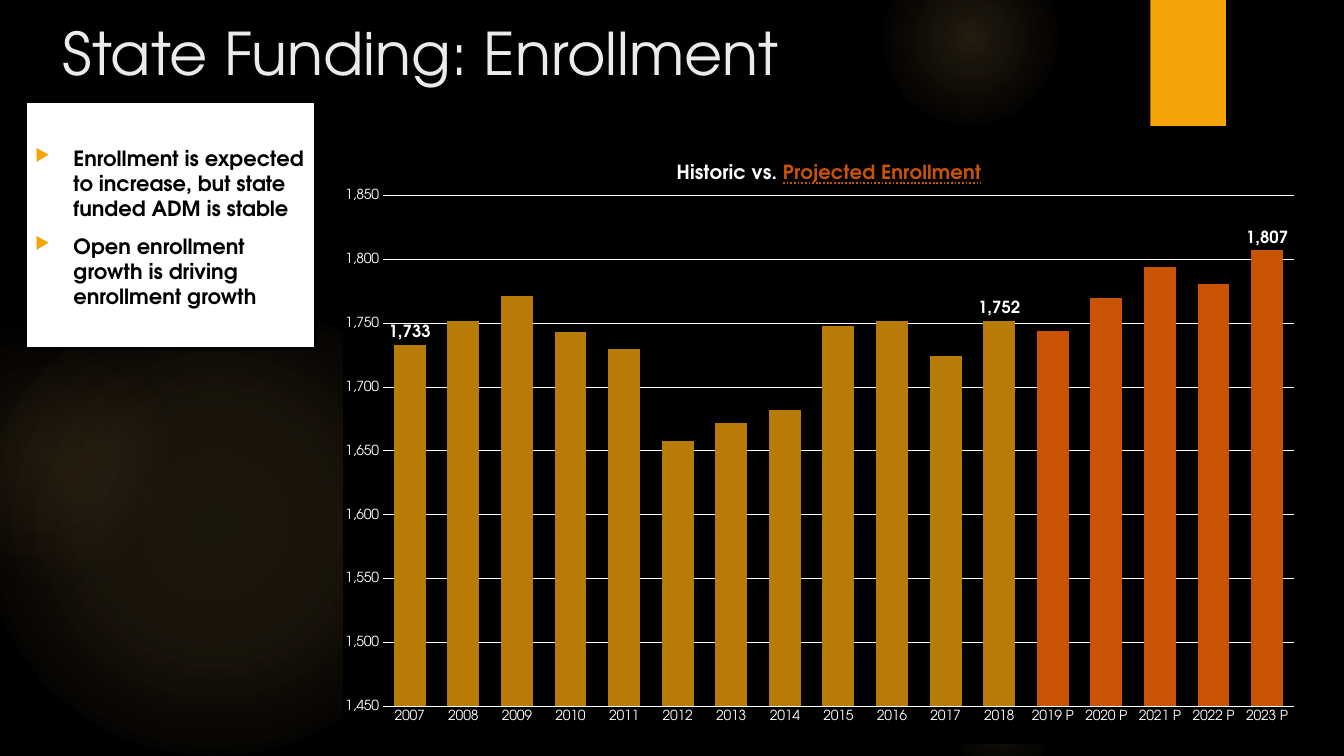
from lxml import etree
from pptx import Presentation
from pptx.chart.data import CategoryChartData
from pptx.dml.color import RGBColor
from pptx.enum.chart import XL_CHART_TYPE, XL_LABEL_POSITION, XL_TICK_MARK
from pptx.enum.shapes import MSO_SHAPE
from pptx.enum.text import MSO_ANCHOR, MSO_UNDERLINE, PP_ALIGN
from pptx.oxml import parse_xml
from pptx.oxml.ns import nsdecls, qn
from pptx.util import Emu, Pt

COLUMNS = XL_CHART_TYPE.COLUMN_CLUSTERED
ABOVE = XL_LABEL_POSITION.OUTSIDE_END
NO_TICK = XL_TICK_MARK.NONE
RECTANGLE, ELLIPSE = MSO_SHAPE.RECTANGLE, MSO_SHAPE.OVAL
TOP, LEFT = MSO_ANCHOR.TOP, PP_ALIGN.LEFT
DOTTED = MSO_UNDERLINE.DOTTED_LINE

BLACK, WHITE, PALE = "000000", "FFFFFF", "EBEBEB"
AMBER, GLOW, PEACH = "F5A408", "FAC96A", "F59B74"
HISTORIC, PROJECTED = "B87B06", "CB5304"

GLOWS = [
    (-17, 292, 458, [(0, GLOW, 11), (36, GLOW, 10), (75, GLOW, 0)]),
    (-92, 317, 258, [(0, GLOW, 8), (36, GLOW, 5), (71, PEACH, 0)]),
    (875, -50, 175, [(0, GLOW, 14), (36, GLOW, 7), (73, GLOW, 0)]),
    (941, 667, 108, [(0, GLOW, 10), (31, GLOW, 5), (66, GLOW, 0)]),
]
POINTS = [
    "Enrollment is expected to increase, but state funded ADM is stable",
    "Open enrollment growth is driving enrollment growth",
]
FIRST_YEAR, FIRST_PROJECTED = 2007, 2019
ENROLLMENT = [1733, 1752, 1771, 1743, 1730, 1658, 1672, 1682, 1748,
              1752, 1724, 1752, 1744, 1770, 1794, 1781, 1807]
LABELLED_YEARS = [2007, 2018, 2023]


def px(length):
    return Emu(length * 9144)


def color(value):
    return RGBColor.from_string(value)


class SlideBuilder:
    def __init__(self, page, font):
        self.page = page
        self.font = font

    def background(self, fill):
        self.page.background.fill.solid()
        self.page.background.fill.fore_color.rgb = color(fill)

    def style(self, font, size, ink, bold=False):
        font.name = self.font
        font.size = Pt(size)
        font.bold = bold
        font.color.rgb = color(ink)

    def span(self, para, text, size, ink, bold=False):
        span = para.add_run()
        span.text = text
        self.style(span.font, size, ink, bold)
        return span

    def shape(self, kind, left, top, width, height, fill, line=None):
        shape = self.page.shapes.add_shape(kind, px(left), px(top), px(width), px(height))
        shape.shadow.inherit = False
        shape.fill.solid()
        shape.fill.fore_color.rgb = color(fill)
        if line:
            shape.line.color.rgb = color(line)
            shape.line.width = Pt(2)
        else:
            shape.line.fill.background()
        return shape

    def glow(self, left, top, size, stops):
        shape = self.shape(ELLIPSE, left, top, size, size, GLOW)
        marks = "".join(
            f'<a:gs pos="{place * 1000}"><a:srgbClr val="{ink}">'
            f'<a:alpha val="{alpha * 1000}"/></a:srgbClr></a:gs>'
            for place, ink, alpha in stops)
        gradient = parse_xml(
            f'<a:gradFill {nsdecls("a")} rotWithShape="1"><a:gsLst>{marks}</a:gsLst>'
            '<a:path path="circle"><a:fillToRect l="50000" t="50000" r="50000" b="50000"/>'
            '</a:path></a:gradFill>')
        properties = shape._element.spPr
        properties.replace(properties.find(qn("a:solidFill")), gradient)

    def title(self, left, top, width, height, text):
        box = self.page.shapes.add_textbox(px(left), px(top), px(width), px(height))
        box.text_frame.word_wrap = True
        box.text_frame.vertical_anchor = TOP
        self.span(box.text_frame.paragraphs[0], text, 42, PALE)

    def bullet_box(self, left, top, width, height, items):
        frame = self.shape(RECTANGLE, left, top, width, height, WHITE, BLACK).text_frame
        frame.word_wrap = True
        frame.vertical_anchor = TOP
        frame.margin_top, frame.margin_left, frame.margin_right = px(43), px(10), px(5)
        for index, item in enumerate(items):
            para = frame.add_paragraph() if index else frame.paragraphs[0]
            properties = para._p.get_or_add_pPr()
            properties.set("marL", str(px(38)))
            properties.set("indent", str(-px(38)))
            ink = etree.SubElement(properties, qn("a:buClr"))
            etree.SubElement(ink, qn("a:srgbClr")).set("val", AMBER)
            etree.SubElement(properties, qn("a:buSzPct")).set("val", "80000")
            etree.SubElement(properties, qn("a:buChar")).set("char", "▶")
            para.alignment = LEFT
            para.space_after = Pt(6)
            if index:
                para.space_before = Pt(3)
            self.span(para, item, 15, BLACK, True)

    def place(self, parent, index, **values):
        for layout in parent.findall(qn("c:layout")):
            parent.remove(layout)
        layout = etree.Element(qn("c:layout"))
        manual = etree.SubElement(layout, qn("c:manualLayout"))
        for name, value in values.items():
            etree.SubElement(manual, qn(f"c:{name}")).set("val", str(value))
        parent.insert(index, layout)

    def enrollment_chart(self, left, top, width, height):
        years = range(FIRST_YEAR, FIRST_YEAR + len(ENROLLMENT))
        data = CategoryChartData(number_format="#,##0")
        data.categories = [f"{year} P" if year >= FIRST_PROJECTED else str(year)
                           for year in years]
        data.add_series("Series 1", ENROLLMENT)
        chart = self.page.shapes.add_chart(
            COLUMNS, px(left), px(top), px(width), px(height), data).chart
        self.style(chart.font, 10, WHITE)
        chart.has_legend = False
        self.chart_heading(chart)
        self.chart_axes(chart)
        plot = chart.plots[0]
        plot.gap_width, plot.overlap, plot.vary_by_categories = 68, -27, False
        series = plot.series[0]
        series.format.fill.solid()
        series.format.fill.fore_color.rgb = color(AMBER)
        series.data_labels.show_value = False
        for index, year in enumerate(years):
            point = series.points[index]
            point.format.fill.solid()
            point.format.fill.fore_color.rgb = color(
                PROJECTED if year >= FIRST_PROJECTED else HISTORIC)
            if year in LABELLED_YEARS:
                self.style(point.data_label.font, 12, WHITE, True)
                point.data_label.position = ABOVE
        body = chart._chartSpace.find(qn("c:chart"))
        self.place(body.find(qn("c:plotArea")), 0, layoutTarget="inner",
                   xMode="edge", yMode="edge", x=0.04, y=0.09, w=0.94, h=0.85)
        paint = f'<a:solidFill><a:srgbClr val="{BLACK}"/></a:solidFill>'
        body.addnext(parse_xml(
            f'<c:spPr {nsdecls("c", "a")}>{paint}<a:ln w="{Pt(2)}">{paint}</a:ln></c:spPr>'))

    def chart_heading(self, chart):
        chart.has_title = True
        heading = chart.chart_title
        para = heading.text_frame.paragraphs[0]
        self.span(para, "Historic vs. ", 14, WHITE, True)
        self.span(para, "Projected Enrollment", 14, PROJECTED, True).font.underline = DOTTED
        heading.include_in_layout = False
        self.place(heading._element, 1, xMode="edge", yMode="edge", x=0.34, y=0.03)

    def chart_axes(self, chart):
        values, categories = chart.value_axis, chart.category_axis
        for axis in (values, categories):
            axis.major_tick_mark = axis.minor_tick_mark = NO_TICK
        values.minimum_scale, values.maximum_scale, values.major_unit = 1450, 1850, 50
        values.tick_labels.number_format = "#,##0"
        values.tick_labels.number_format_is_linked = False
        values.format.line.fill.background()
        for line in (values.major_gridlines.format.line, categories.format.line):
            line.color.rgb = color(WHITE)
            line.width = Pt(0.75)


def main():
    deck = Presentation()
    deck.slide_width, deck.slide_height = px(1333), px(750)
    page = deck.slides.add_slide(deck.slide_layouts[6])
    builder = SlideBuilder(page, "TeX Gyre Adventor")
    builder.background(BLACK)
    for glow in GLOWS:
        builder.glow(*glow)
    builder.shape(RECTANGLE, 1141, 0, 75, 125, AMBER)
    builder.title(52, 12, 1086, 153, "State Funding: Enrollment")
    builder.enrollment_chart(340, 139, 964, 599)
    builder.bullet_box(25, 101, 288, 245, POINTS)
    deck.save("out.pptx")


if __name__ == "__main__":
    main()
